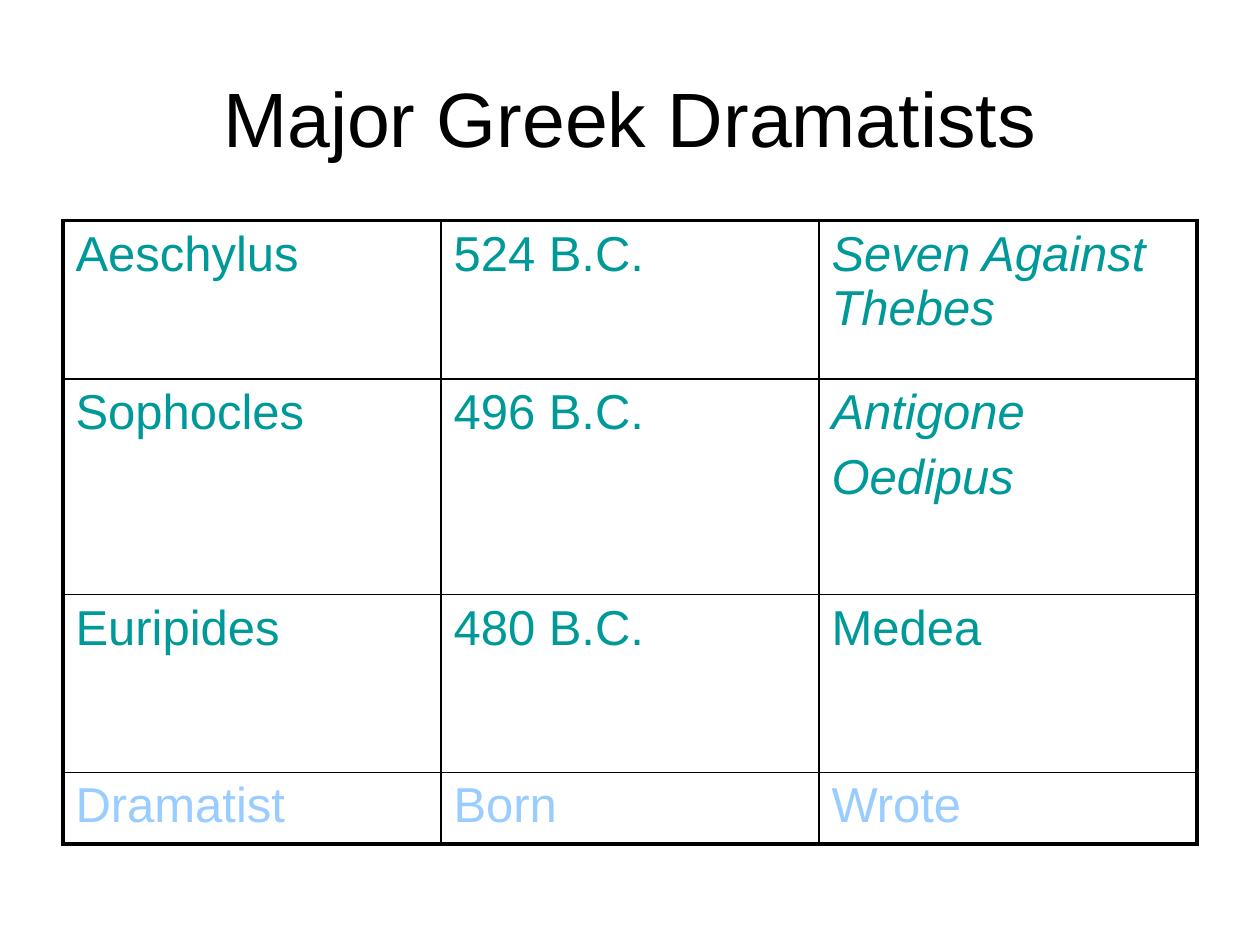
from lxml.etree import SubElement
from pptx import Presentation
from pptx.dml.color import RGBColor
from pptx.enum.text import MSO_ANCHOR, PP_ALIGN
from pptx.oxml.ns import qn
from pptx.util import Inches, Pt

BLACK = RGBColor(0x00, 0x00, 0x00)
TEAL = RGBColor(0x00, 0x99, 0x99)
LIGHT_BLUE = RGBColor(0x99, 0xCC, 0xFF)
FONT = "Arial"
OUTER, INNER = 2.25, 1

TITLE = "Major Greek Dramatists"
DRAMATISTS = [
    {"cells": ["Aeschylus", "524 B.C.", "Seven Against Thebes"], "height": 1.26, "italic": True},
    {"cells": ["Sophocles", "496 B.C.", "Antigone\nOedipus"], "height": 1.71, "italic": True},
    {"cells": ["Euripides", "480 B.C.", "Medea"], "height": 1.41},
    {"cells": ["Dramatist", "Born", "Wrote"], "height": 0.57, "color": LIGHT_BLUE},
]
COLUMN_COUNT, COLUMN_WIDTH = 3, 3


def write_text(frame, text, size, color, italic=False, align=PP_ALIGN.LEFT, gap=0):
    for index, line in enumerate(text.split("\n")):
        para = frame.add_paragraph() if index else frame.paragraphs[0]
        para.alignment = align
        if index:
            para.space_before = Pt(gap)
        span = para.add_run()
        span.text = line
        span.font.name = FONT
        span.font.size = Pt(size)
        span.font.italic = italic
        span.font.color.rgb = color


def set_borders(cell, widths):
    properties = cell._tc.get_or_add_tcPr()
    for side, width in widths.items():
        line = SubElement(properties, qn(f"a:ln{side}"), w=str(Pt(width)))
        fill = SubElement(line, qn("a:solidFill"))
        SubElement(fill, qn("a:srgbClr"), val=str(BLACK))


def add_dramatists(page):
    row_count = len(DRAMATISTS)
    height = sum(row["height"] for row in DRAMATISTS)
    table = page.shapes.add_table(
        row_count, COLUMN_COUNT, Inches(0.5), Inches(1.75),
        Inches(COLUMN_COUNT * COLUMN_WIDTH), Inches(height),
    ).table
    table.first_row = False
    table.horz_banding = False
    for column in table.columns:
        column.width = Inches(COLUMN_WIDTH)
    for row_index, row in enumerate(DRAMATISTS):
        table.rows[row_index].height = Inches(row["height"])
        for column_index, text in enumerate(row["cells"]):
            cell = table.cell(row_index, column_index)
            last_column = column_index == COLUMN_COUNT - 1
            set_borders(cell, {
                "L": OUTER if column_index == 0 else INNER,
                "R": OUTER if last_column else INNER,
                "T": OUTER if row_index == 0 else INNER,
                "B": OUTER if row_index == row_count - 1 else INNER,
            })
            cell.fill.background()
            write_text(cell.text_frame, text, 28, row.get("color", TEAL),
                       italic=last_column and row.get("italic", False), gap=5.6)


def main():
    deck = Presentation()
    deck.slide_width, deck.slide_height = Inches(10), Inches(7.5)
    page = deck.slides.add_slide(deck.slide_layouts[5])
    title = page.shapes.title
    title.left, title.top = Inches(0.5), Inches(0.3)
    title.width, title.height = Inches(9), Inches(1.25)
    title.text_frame.vertical_anchor = MSO_ANCHOR.MIDDLE
    write_text(title.text_frame, TITLE, 44, BLACK, align=PP_ALIGN.CENTER)
    add_dramatists(page)
    deck.save("out.pptx")


if __name__ == "__main__":
    main()
